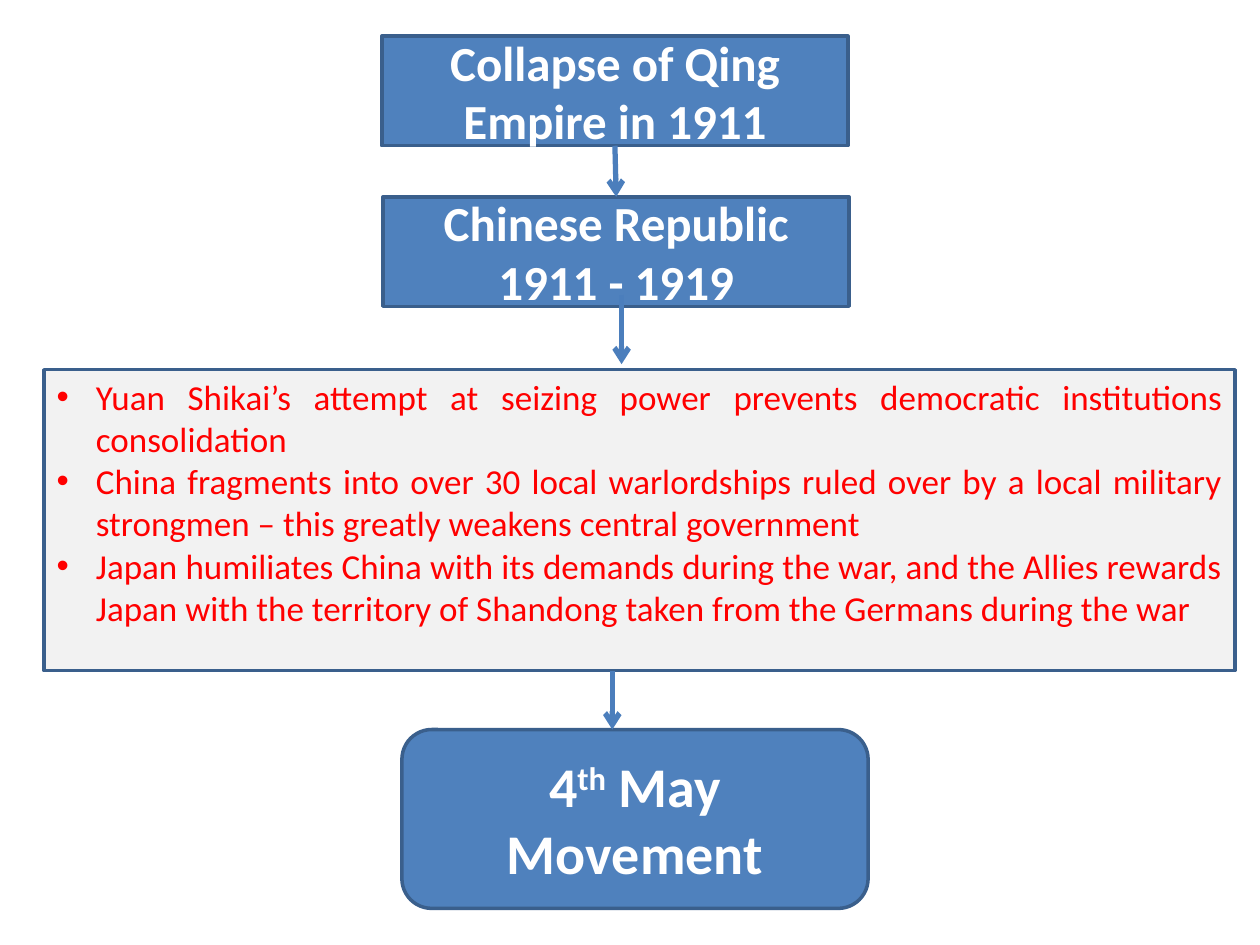
from lxml.etree import SubElement
from pptx import Presentation
from pptx.dml.color import RGBColor
from pptx.enum.shapes import MSO_CONNECTOR as Connector, MSO_SHAPE as Shape
from pptx.enum.text import MSO_ANCHOR as Anchor, PP_ALIGN as Align
from pptx.oxml.ns import qn
from pptx.util import Pt

BLUE, OUTLINE, ARROW = "4F81BD", "3A5F8C", "4B7EBC"
WHITE, GREY, RED = "FFFFFF", "F2F2F2", "FF0000"
BOX_WIDTH, EVENT_HEIGHT = 266.4, 62.6
INDENT = 22.5

CAUSES = [
    "Yuan Shikai’s attempt at seizing power prevents democratic institutions consolidation",
    "China fragments into over 30 local warlordships ruled over by a local military "
    "strongmen – this greatly weakens central government",
    "Japan humiliates China with its demands during the war, and the Allies rewards "
    "Japan with the territory of Shandong taken from the Germans during the war",
]


def color(value):
    return RGBColor.from_string(value)


def add_text(paragraph, text, size=28, fill=WHITE, bold=True, align=Align.CENTER,
             superscript=False):
    paragraph.alignment = align
    run = paragraph.add_run()
    run.text = text
    run.font.name = "Calibri"
    run.font.size = Pt(size)
    run.font.bold = bold
    run.font.color.rgb = color(fill)
    if superscript:
        run.font._element.set("baseline", "30000")


def add_bullet(paragraph):
    properties = paragraph._p.get_or_add_pPr()
    properties.set("marL", str(Pt(INDENT)))
    properties.set("indent", str(-Pt(INDENT)))
    SubElement(properties, qn("a:buFont"), typeface="Arial")
    SubElement(properties, qn("a:buChar"), char="•")


def add_box(slide, left, top, width, height, kind=Shape.RECTANGLE, fill=BLUE):
    shape = slide.shapes.add_shape(kind, Pt(left), Pt(top), Pt(width), Pt(height))
    shape.shadow.inherit = False
    shape.fill.solid()
    shape.fill.fore_color.rgb = color(fill)
    shape.line.color.rgb = color(OUTLINE)
    shape.line.width = Pt(2)
    shape.text_frame.word_wrap = True
    shape.text_frame.vertical_anchor = Anchor.MIDDLE
    return shape


def add_event(slide, text, left, top):
    box = add_box(slide, left, top, BOX_WIDTH, EVENT_HEIGHT)
    add_text(box.text_frame.paragraphs[0], text)
    return box


def add_arrow(slide, x=0, top=0, bottom=0):
    arrow = slide.shapes.add_connector(
        Connector.STRAIGHT, Pt(x), Pt(top), Pt(x), Pt(bottom))
    arrow.line.color.rgb = color(ARROW)
    arrow.line.width = Pt(3)
    SubElement(arrow.line._get_or_add_ln(), qn("a:tailEnd"), type="arrow")
    SubElement(arrow._element.spPr, qn("a:effectLst"))
    return arrow


def add_causes(slide):
    box = add_box(slide, 25.2, 211.3, 680.4, 172, fill=GREY)
    frame = box.text_frame
    frame.vertical_anchor = Anchor.TOP
    for index, cause in enumerate(CAUSES):
        paragraph = frame.add_paragraph() if index else frame.paragraphs[0]
        add_bullet(paragraph)
        add_text(paragraph, cause, size=20, fill=RED, bold=False, align=Align.JUSTIFY)


def add_outcome(slide):
    box = add_box(slide, 229.7, 416.9, BOX_WIDTH, 102.2, kind=Shape.ROUNDED_RECTANGLE)
    paragraph = box.text_frame.paragraphs[0]
    add_text(paragraph, "4", size=32)
    add_text(paragraph, "th", size=32, superscript=True)
    add_text(paragraph, " May Movement", size=32)


def main():
    presentation = Presentation()
    presentation.slide_width, presentation.slide_height = Pt(720), Pt(540)
    slide = presentation.slides.add_slide(presentation.slide_layouts[6])

    # Events leading to the movement
    add_outcome(slide)
    collapse = add_event(slide, "Collapse of Qing Empire in 1911", 218.2, 20.7)
    republic = add_event(slide, "Chinese Republic 1911 - 1919", 218.9, 112.5)
    arrow = add_arrow(slide)
    arrow.begin_connect(collapse, 2)
    arrow.end_connect(republic, 0)

    # Causes, with the arrows into and out of them
    add_arrow(slide, 355.2, 168.5, 208.1)
    add_causes(slide)
    add_arrow(slide, 349.9, 383.3, 416.9)

    presentation.save("out.pptx")


if __name__ == "__main__":
    main()
